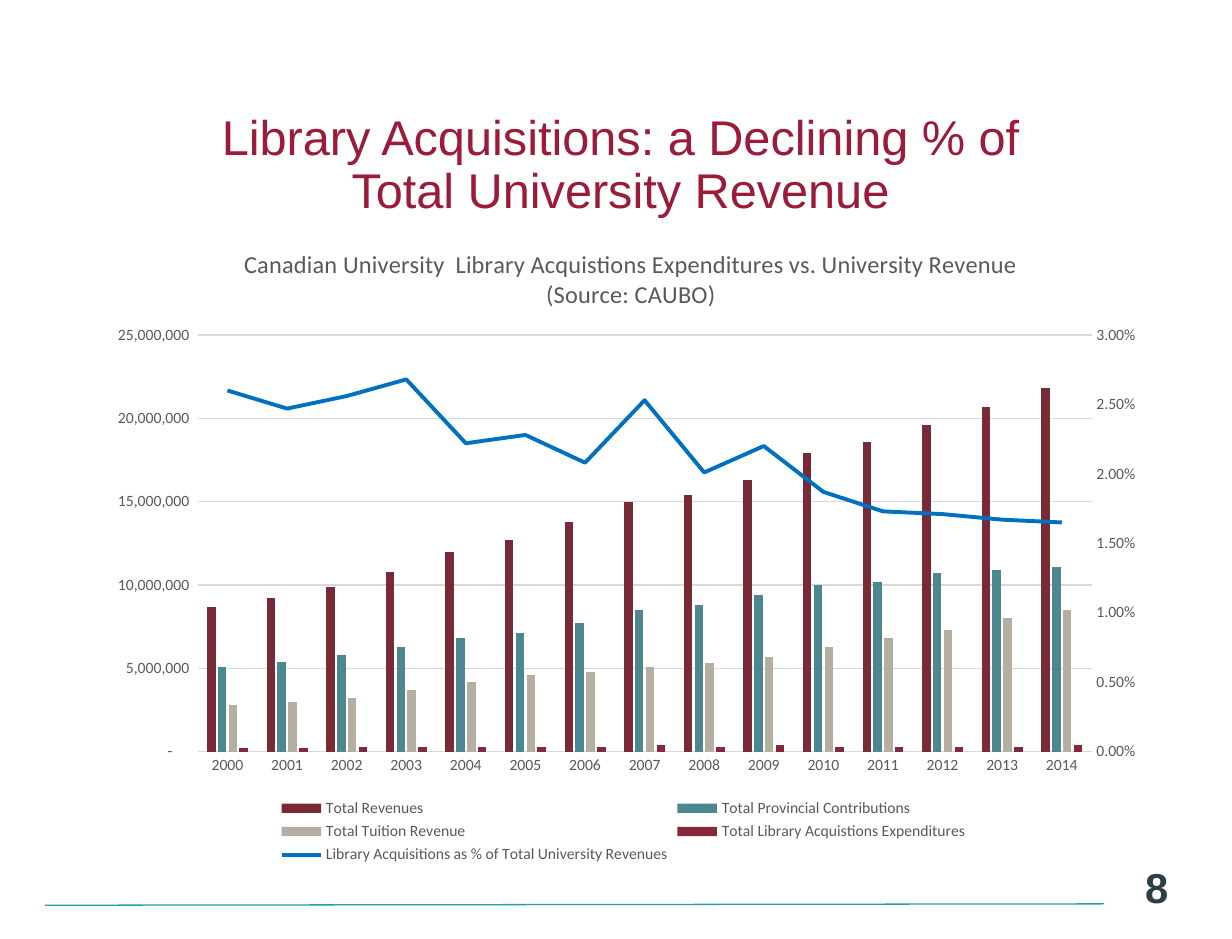
from copy import deepcopy

from pptx import Presentation
from pptx.chart.axis import ValueAxis
from pptx.chart.data import CategoryChartData
from pptx.dml.color import RGBColor
from pptx.enum.chart import XL_CHART_TYPE, XL_LEGEND_POSITION, XL_MARKER_STYLE, XL_TICK_MARK
from pptx.enum.shapes import MSO_CONNECTOR
from pptx.enum.text import MSO_ANCHOR, PP_ALIGN
from pptx.oxml import parse_xml
from pptx.oxml.ns import nsdecls, qn
from pptx.util import Pt

YEARS = [str(year) for year in range(2000, 2015)]
UNIT = 100_000
AMOUNTS = [
    ("Total Revenues", "782A37",
     [87, 92, 99, 108, 120, 127, 138, 150, 154, 163, 179, 186, 196, 207, 218]),
    ("Total Provincial Contributions", "4D878F",
     [51, 54, 58, 63, 68, 71, 77, 85, 88, 94, 100, 102, 107, 109, 111]),
    ("Total Tuition Revenue", "B5AFA2",
     [28, 30, 32, 37, 42, 46, 48, 51, 53, 57, 63, 68, 73, 80, 85]),
    ("Total Library Acquistions Expenditures", "842939",
     [2, 2, 3, 3, 3, 3, 3, 4, 3, 4, 3, 3, 3, 3, 4]),
]
SHARE_NAME = "Library Acquisitions as % of Total University Revenues"
SHARES = [0.026, 0.0247, 0.0256, 0.0268, 0.0222, 0.0228, 0.0208, 0.0253,
          0.0201, 0.022, 0.0187, 0.0173, 0.0171, 0.0167, 0.0165]
AMOUNT_FORMAT = '_-* #,##0_-;\\-* #,##0_-;_-* "-"??_-;_-@_'


def rgb(hex_string):
    return RGBColor.from_string(hex_string)


def set_val(element, tag, value):
    element.find(qn(tag)).set("val", value)


def remove_all(element, tag):
    for child in element.findall(qn(tag)):
        element.remove(child)


def place(element, index, x, y, w=None, h=None):
    """Give a chart part a manual layout, in fractions of the chart."""
    remove_all(element, "c:layout")
    target = '<c:layoutTarget val="inner"/>' if w else ""
    size = f'<c:w val="{w}"/><c:h val="{h}"/>' if w else ""
    element.insert(index, parse_xml(
        f'<c:layout {nsdecls("c")}><c:manualLayout>{target}'
        f'<c:xMode val="edge"/><c:yMode val="edge"/>'
        f'<c:x val="{x}"/><c:y val="{y}"/>{size}</c:manualLayout></c:layout>'))


class SlideBuilder:
    text_font, chart_font = "Arial", "Calibri"
    heading, number, rule = "9C1B39", "2C3F45", "21A29D"
    chart_text, grid, share_line = "595959", "D9D9D9", "0070C0"

    def __init__(self, prs):
        self.s = prs.slides.add_slide(prs.slide_layouts[6])

    def style_font(self, font, name, size, color, bold=False):
        font.name, font.size, font.bold = name, Pt(size), bold
        font.color.rgb = rgb(color)

    def text(self, box, text, size, color, align, bold=False, spacing=1.0):
        tf = self.s.shapes.add_textbox(*map(Pt, box)).text_frame
        tf.word_wrap = True
        tf.vertical_anchor = MSO_ANCHOR.MIDDLE
        tf.text = text
        p = tf.paragraphs[0]
        p.alignment, p.line_spacing = align, spacing
        for r in p.runs:
            self.style_font(r.font, self.text_font, size, color, bold)

    def line(self, x1, y1, x2, y2):
        line = self.s.shapes.add_connector(
            MSO_CONNECTOR.STRAIGHT, Pt(x1), Pt(y1), Pt(x2), Pt(y2))
        line.line.color.rgb = rgb(self.rule)
        line.line.width = Pt(0.75)
        line._element.spPr.append(parse_xml(f'<a:effectLst {nsdecls("a")}/>'))

    def chart(self, box):
        data = CategoryChartData()
        data.categories = YEARS
        for name, _, values in AMOUNTS:
            data.add_series(name, [v * UNIT for v in values], AMOUNT_FORMAT)
        data.add_series(SHARE_NAME, SHARES, "0.00%")
        chart = self.s.shapes.add_chart(
            XL_CHART_TYPE.COLUMN_CLUSTERED, *map(Pt, box), data).chart
        self.style_font(chart.font, self.chart_font, 10, "000000")

        bars = chart.plots[0]
        bars.gap_width, bars.overlap, bars.vary_by_categories = 219, -27, False
        for series, (_, color, _) in zip(bars.series, AMOUNTS):
            series.format.fill.solid()
            series.format.fill.fore_color.rgb = rgb(color)

        self.axes(chart)
        self.move_share_to_line(chart)
        self.chart_title(chart)
        chart.has_legend = True
        chart.legend.position = XL_LEGEND_POSITION.BOTTOM
        chart.legend.include_in_layout = False
        self.style_font(chart.legend.font, self.chart_font, 9, self.chart_text)
        place(chart.plots[0]._element.getparent(), 0, 0.1, 0.18, 0.84, 0.64)

    def axes(self, chart):
        years, amounts = chart.category_axis, chart.value_axis
        for axis in (years, amounts):
            axis.major_tick_mark = axis.minor_tick_mark = XL_TICK_MARK.NONE
            self.style_font(axis.tick_labels.font, self.chart_font, 9, self.chart_text)
        amounts.format.line.fill.background()
        for line in (years.format.line, amounts.major_gridlines.format.line):
            line.color.rgb = rgb(self.grid)
            line.width = Pt(0.75)
        self.scale(amounts, 25_000_000, 5_000_000, AMOUNT_FORMAT)

    def scale(self, axis, maximum, step, number_format):
        axis.minimum_scale, axis.maximum_scale, axis.major_unit = 0, maximum, step
        axis.tick_labels.number_format = number_format
        axis.tick_labels.number_format_is_linked = False

    def move_share_to_line(self, chart):
        """Draw the last series as a line against a second, right-hand axis."""
        bar = chart.plots[0]._element
        share = bar.findall(qn("c:ser"))[-1]
        remove_all(share, "c:invertIfNegative")
        line_chart = parse_xml(
            f'<c:lineChart {nsdecls("c")}><c:grouping val="standard"/>'
            '<c:varyColors val="0"/><c:marker val="1"/>'
            '<c:axId val="5001"/><c:axId val="5002"/></c:lineChart>')
        line_chart.insert(2, share)
        bar.addnext(line_chart)

        left = chart.value_axis._element
        right, hidden = deepcopy(left), deepcopy(chart.category_axis._element)
        left.addnext(right)
        right.addnext(hidden)
        for axis, own, other in ((hidden, "5001", "5002"), (right, "5002", "5001")):
            set_val(axis, "c:axId", own)
            set_val(axis, "c:crossAx", other)
        set_val(hidden, "c:delete", "1")
        set_val(right, "c:axPos", "r")
        set_val(right, "c:crosses", "max")
        percent = ValueAxis(right)
        percent.has_major_gridlines = False
        self.scale(percent, 0.03, 0.005, "0.00%")

        series = chart.plots[1].series[0]
        series.smooth = False
        series.marker.style = XL_MARKER_STYLE.NONE
        series.format.line.color.rgb = rgb(self.share_line)
        series.format.line.width = Pt(2.25)

    def chart_title(self, chart):
        chart.has_title = True
        title = chart.chart_title
        title.include_in_layout = False
        title.text_frame.text = (
            "Canadian University  Library Acquistions Expenditures vs. "
            "University Revenue\n(Source: CAUBO)")
        for p in title.text_frame.paragraphs:
            p.alignment = PP_ALIGN.CENTER
            for r in p.runs:
                self.style_font(r.font, self.chart_font, 14, self.chart_text)
        place(title._element, 1, 0.14, 0.04)


def main():
    prs = Presentation()
    prs.slide_width, prs.slide_height = Pt(708.5), Pt(540)
    b = SlideBuilder(prs)
    b.line(635, 519.8, 26, 520.6)
    b.text((52.5, 65.5, 608.5, 60),
           "Library Acquisitions: a Declining % of\vTotal University Revenue",
           28, b.heading, PP_ALIGN.CENTER, spacing=0.9)
    b.text((500.5, 480.2, 178.5, 60), "8", 24, b.number, PP_ALIGN.RIGHT, bold=True)
    b.chart((52.5, 125.3, 612, 374.4))
    prs.save("out.pptx")


if __name__ == "__main__":
    main()
